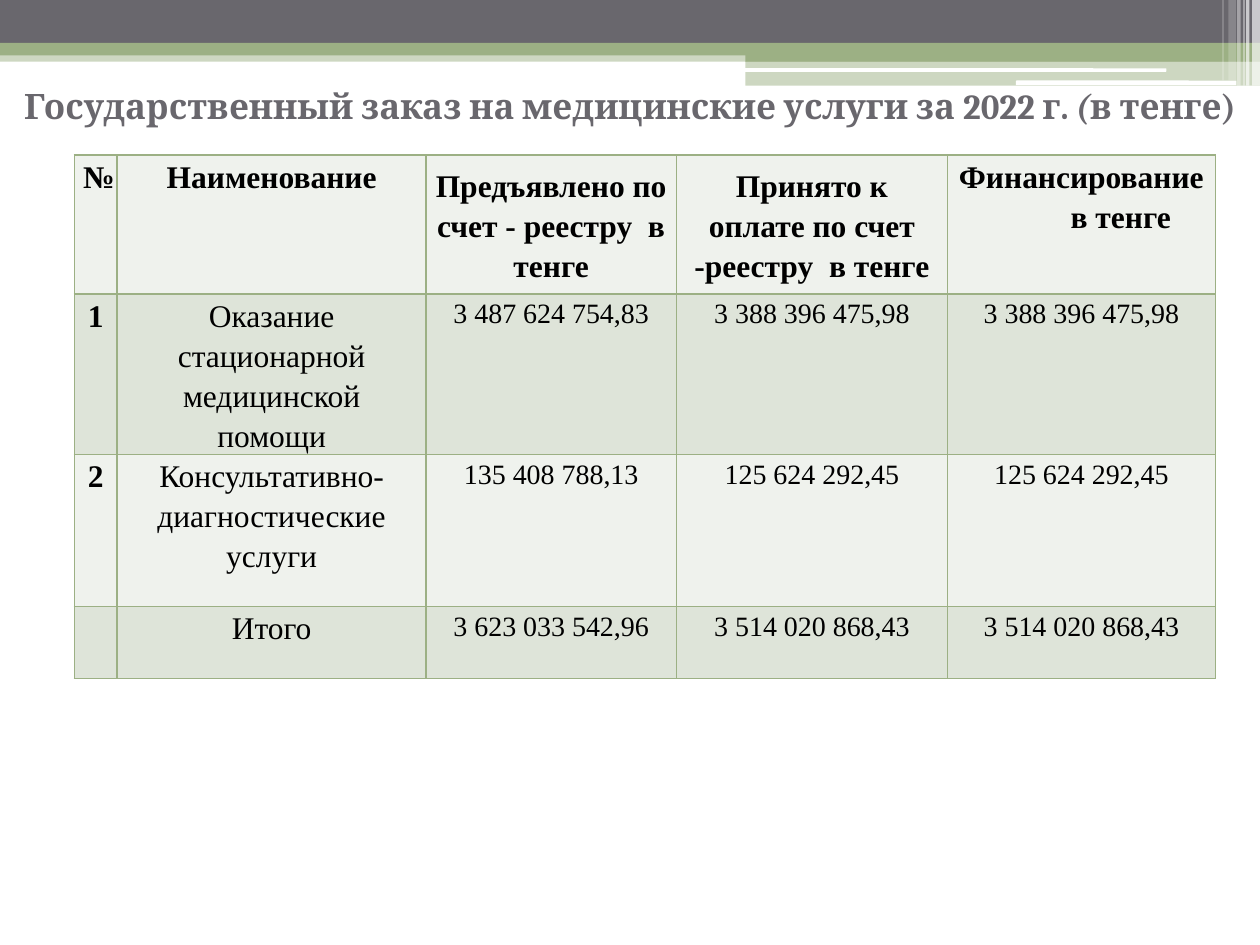
from dataclasses import dataclass

from lxml.etree import SubElement
from pptx import Presentation
from pptx.dml.color import RGBColor
from pptx.enum.shapes import MSO_SHAPE
from pptx.enum.text import MSO_ANCHOR, MSO_AUTO_SIZE, PP_ALIGN
from pptx.oxml.ns import qn
from pptx.util import Pt


@dataclass(frozen=True)
class Theme:
    grey: str = "69676D"
    green: str = "9CB084"
    white: str = "FFFFFF"
    black: str = "000000"
    light_row: str = "EFF2ED"
    dark_row: str = "DEE4D9"
    title_font: str = "Cambria"
    table_font: str = "Times New Roman"
    title_size: float = 20
    label_size: float = 18
    amount_size: float = 16


THEME = Theme()
WIDTH, HEIGHT = 720, 540

# left, top, width, height, colour, opacity in percent
BANDS = [
    (0, 28.8, WIDTH, 6.5, THEME.green, 50),
    (0, 0, WIDTH, 24.5, THEME.grey, 100),
    (0, 24.5, WIDTH, 7.2, THEME.green, 100),
    (426, 28, 294, 7.2, THEME.green, 100),
    (426, 35, 294, 14, THEME.green, 50),
]
# left, top, width, height
WHITE_BARS = [(425.5, 39, 241, 2), (580.5, 46, 126, 2.7)]
# left, width, height, opacity in percent
STREAKS = [
    (715.5, 4.5, 49, 65),
    (712, 2, 49, 65),
    (710.5, 0.75, 49, 60),
    (707, 2, 49, 40),
    (702, 4.3, 46, 20),
    (698.5, 0.75, 46, 30),
]

TITLE_RUNS = [
    ("Государственный заказ на медицинские услуги за 2022 г.", False),
    (" (", True),
    ("в тенге)", False),
]

COLUMN_WIDTHS = [24.5, 176.5, 143, 155, 153]
ROW_HEIGHTS = [79.5, 87, 87, 41]
TABLE_ROWS = [
    ["№", "Наименование", "Предъявлено по счет - реестру  в тенге",
     "Принято к оплате по счет -реестру  в тенге", "Финансирование в тенге"],
    ["1", "Оказание стационарной медицинской помощи",
     "3 487 624 754,83", "3 388 396 475,98", "3 388 396 475,98"],
    ["2", "Консультативно-диагностические услуги",
     "135 408 788,13", "125 624 292,45", "125 624 292,45"],
    ["", "Итого", "3 623 033 542,96", "3 514 020 868,43", "3 514 020 868,43"],
]


class SlideBuilder:
    def __init__(self, slide, theme):
        self.slide = slide
        self.theme = theme

    def add_block(self, left, top, width, height, color, opacity=100,
                  preset=MSO_SHAPE.RECTANGLE):
        shape = self.slide.shapes.add_shape(
            preset, Pt(left), Pt(top), Pt(width), Pt(height))
        shape.shadow.inherit = False
        shape.line.fill.background()
        shape.fill.solid()
        shape.fill.fore_color.rgb = RGBColor.from_string(color)
        if opacity < 100:
            color_element = shape.fill._xPr.find(".//" + qn("a:srgbClr"))
            SubElement(color_element, qn("a:alpha"), val=str(opacity * 1000))

    def format_run(self, run, font_name, size, color, bold, italic=False):
        font = run.font
        font.name, font.size = font_name, Pt(size)
        font.bold, font.italic = bold, italic
        font.color.rgb = RGBColor.from_string(color)

    def add_title(self, runs, left, top, width, height):
        title = self.slide.shapes.title
        title.left, title.top = Pt(left), Pt(top)
        title.width, title.height = Pt(width), Pt(height)
        frame = title.text_frame
        frame.word_wrap = True
        frame.auto_size = MSO_AUTO_SIZE.NONE
        frame.vertical_anchor = MSO_ANCHOR.MIDDLE
        paragraph = frame.paragraphs[0]
        paragraph.alignment = PP_ALIGN.CENTER
        for text, italic in runs:
            run = paragraph.add_run()
            run.text = text
            self.format_run(run, self.theme.title_font, self.theme.title_size,
                            self.theme.grey, True, italic)

    def set_borders(self, cell):
        """Draw thin green lines; the schema wants them ahead of the fill."""
        properties = cell._tc.get_or_add_tcPr()
        for side in ("a:lnL", "a:lnR", "a:lnT", "a:lnB"):
            line = SubElement(properties, qn(side), w=str(Pt(1)))
            fill = SubElement(line, qn("a:solidFill"))
            SubElement(fill, qn("a:srgbClr"), val=self.theme.green)

    def format_cell(self, cell, text, size, bold, color):
        self.set_borders(cell)
        cell.fill.solid()
        cell.fill.fore_color.rgb = RGBColor.from_string(color)
        cell.margin_left = cell.margin_right = Pt(5)
        cell.margin_top = cell.margin_bottom = 0
        cell.text_frame.text = text
        paragraph = cell.text_frame.paragraphs[0]
        paragraph.alignment = PP_ALIGN.CENTER
        paragraph.line_spacing = 1.15
        for run in paragraph.runs:
            self.format_run(run, self.theme.table_font, size,
                            self.theme.black, bold)

    def add_table(self, rows, left, top, widths, heights):
        table = self.slide.shapes.add_table(
            len(rows), len(widths), Pt(left), Pt(top),
            Pt(sum(widths)), Pt(sum(heights))).table
        table.first_row = table.horz_banding = False
        for column, width in zip(table.columns, widths):
            column.width = Pt(width)
        for row, height in zip(table.rows, heights):
            row.height = Pt(height)
        fills = (self.theme.light_row, self.theme.dark_row)
        for row_index, texts in enumerate(rows):
            for column_index, text in enumerate(texts):
                is_header = row_index == 0
                is_amount = not is_header and column_index >= 2
                size = self.theme.amount_size if is_amount else self.theme.label_size
                self.format_cell(table.cell(row_index, column_index), text, size,
                                 is_header or column_index == 0,
                                 fills[row_index % 2])
        return table


def indent_wrapped_lines(paragraph, indent):
    """Shift every line but the first to the right."""
    properties = paragraph._p.get_or_add_pPr()
    properties.set("marL", str(Pt(indent)))
    properties.set("indent", str(-Pt(indent)))


def main():
    presentation = Presentation()
    presentation.slide_width, presentation.slide_height = Pt(WIDTH), Pt(HEIGHT)
    slide = presentation.slides.add_slide(presentation.slide_layouts[5])
    builder = SlideBuilder(slide, THEME)

    for band in BANDS:
        builder.add_block(*band)
    for bar in WHITE_BARS:
        builder.add_block(*bar, THEME.white, preset=MSO_SHAPE.ROUNDED_RECTANGLE)
    for left, width, height, opacity in STREAKS:
        builder.add_block(left, 0, width, height, THEME.white, opacity)

    builder.add_title(TITLE_RUNS, 0, 31.7, WIDTH, 57)
    table = builder.add_table(TABLE_ROWS, 42.5, 88.5, COLUMN_WIDTHS, ROW_HEIGHTS)
    for column_index in (2, 3):
        table.cell(0, column_index).vertical_anchor = MSO_ANCHOR.MIDDLE
    indent_wrapped_lines(table.cell(0, 4).text_frame.paragraphs[0], 45)

    presentation.save("out.pptx")


if __name__ == "__main__":
    main()
